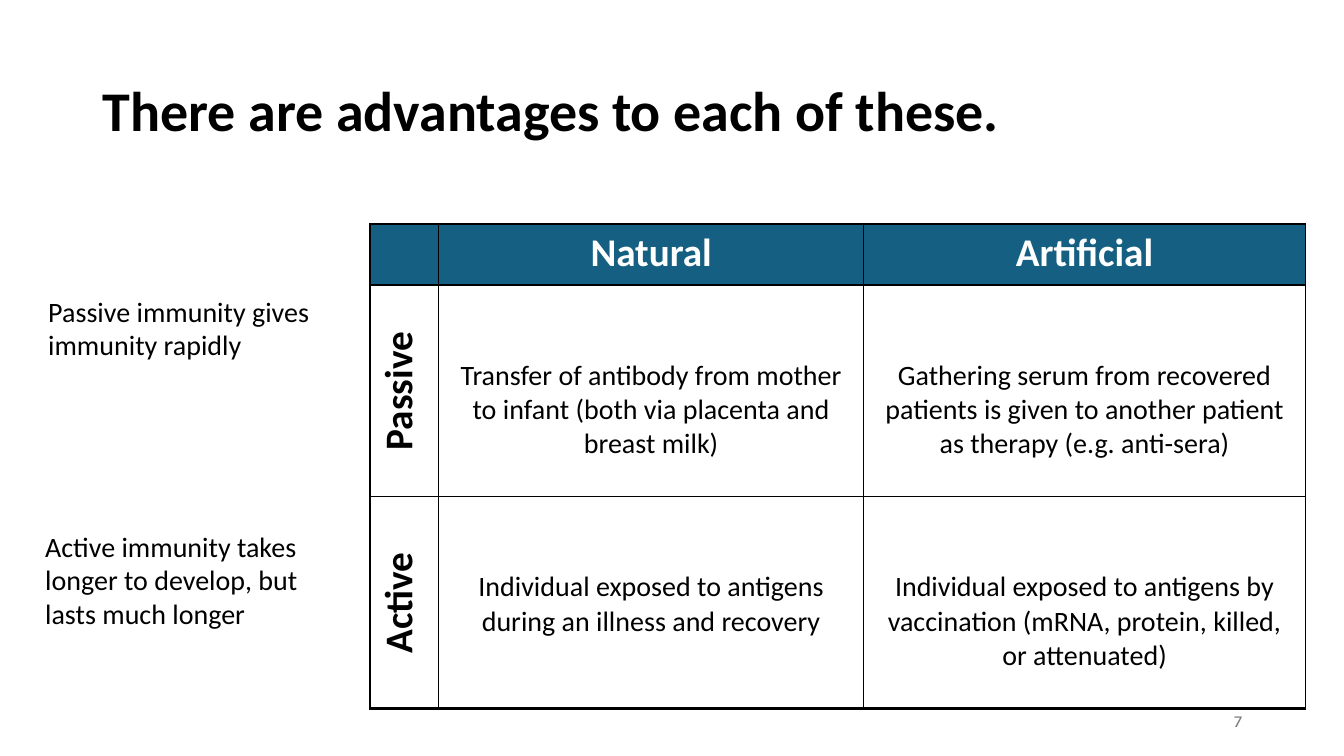
from lxml.etree import SubElement
from pptx import Presentation
from pptx.dml.color import RGBColor
from pptx.enum.text import MSO_ANCHOR as Anchor, PP_ALIGN as Align
from pptx.oxml.ns import qn
from pptx.util import Pt

BLACK, WHITE, GREY, TEAL = "000000", "FFFFFF", "797979", "156082"

COLUMN_WIDTHS = [48.96, 303.84, 315.36]
ROW_HEIGHTS = [43.92, 151.2, 151.2]
RULE_WIDTHS = [2, 2, 1, 2]  # horizontal rules, top to bottom
BODY_TOP_MARGIN = 52.4

IMMUNITY = [
    ["", "Natural", "Artificial"],
    ["Passive",
     "Transfer of antibody from mother to infant (both via placenta and breast milk)",
     "Gathering serum from recovered patients is given to another patient "
     "as therapy (e.g. anti-sera)"],
    ["Active",
     "Individual exposed to antigens during an illness and recovery",
     "Individual exposed to antigens by vaccination (mRNA, protein, killed, "
     "or attenuated)"],
]


def rgb(color):
    return RGBColor.from_string(color)


def write(frame, text, size, color=BLACK, bold=False, align=Align.LEFT, name="Calibri"):
    paragraph = frame.paragraphs[0]
    paragraph.text = text
    paragraph.alignment = align
    font = paragraph.font
    font.name, font.size, font.bold = name, Pt(size), bold
    font.color.rgb = rgb(color)
    return paragraph


def add_text(slide, box, text, size, anchor=Anchor.TOP, **style):
    frame = slide.shapes.add_textbox(*map(Pt, box)).text_frame
    frame.word_wrap = True
    frame.vertical_anchor = anchor
    return write(frame, text, size, **style)


def set_borders(cell, top, bottom):
    """Draw black cell borders; the side borders are always 1 pt."""
    properties = cell._tc.get_or_add_tcPr()
    for side, width in zip("LRTB", (1, 1, top, bottom)):
        line = SubElement(properties, qn(f"a:ln{side}"), w=str(Pt(width)))
        fill = SubElement(line, qn("a:solidFill"))
        SubElement(fill, qn("a:srgbClr"), val=BLACK)


def fill_cell(cell, text, row, column):
    set_borders(cell, RULE_WIDTHS[row], RULE_WIDTHS[row + 1])
    is_header = row == 0
    is_label = is_header or column == 0
    cell.fill.solid()
    cell.fill.fore_color.rgb = rgb(TEAL if is_header else WHITE)
    if not is_label:
        cell.margin_top = Pt(BODY_TOP_MARGIN)
    elif not is_header:
        cell._tc.get_or_add_tcPr().set("vert", "vert270")
    write(cell.text_frame, text, 28 if is_label else 20,
          color=WHITE if is_header else BLACK, bold=is_label, align=Align.CENTER)


def add_immunity_table(slide, left, top):
    size = sum(COLUMN_WIDTHS), sum(ROW_HEIGHTS)
    table = slide.shapes.add_table(
        len(ROW_HEIGHTS), len(COLUMN_WIDTHS), *map(Pt, (left, top, *size))).table
    table.horz_banding = False
    for column, width in zip(table.columns, COLUMN_WIDTHS):
        column.width = Pt(width)
    for row, height in zip(table.rows, ROW_HEIGHTS):
        row.height = Pt(height)
    for row, texts in enumerate(IMMUNITY):
        for column, text in enumerate(texts):
            fill_cell(table.cell(row, column), text, row, column)


def main():
    deck = Presentation()
    deck.slide_width, deck.slide_height = Pt(960), Pt(540)
    slide = deck.slides.add_slide(deck.slide_layouts[6])

    title = add_text(slide, (66.24, 28.8, 828, 104.4),
                     "There are advantages to each of these.", 40,
                     anchor=Anchor.MIDDLE, bold=True)
    title.line_spacing = 0.9
    add_text(slide, (678.24, 500.4, 216, 28.8), "7", 12, anchor=Anchor.MIDDLE,
             color=GREY, align=Align.RIGHT, name="Karla")
    add_text(slide, (27.36, 206.64, 216.72, 55.44),
             "Passive immunity gives immunity rapidly", 20)
    add_text(slide, (25.2, 374.4, 199.44, 79.92),
             "Active immunity takes longer to develop, but lasts much longer", 20)
    add_immunity_table(slide, 264.24, 159.84)

    deck.save("out.pptx")


if __name__ == "__main__":
    main()
